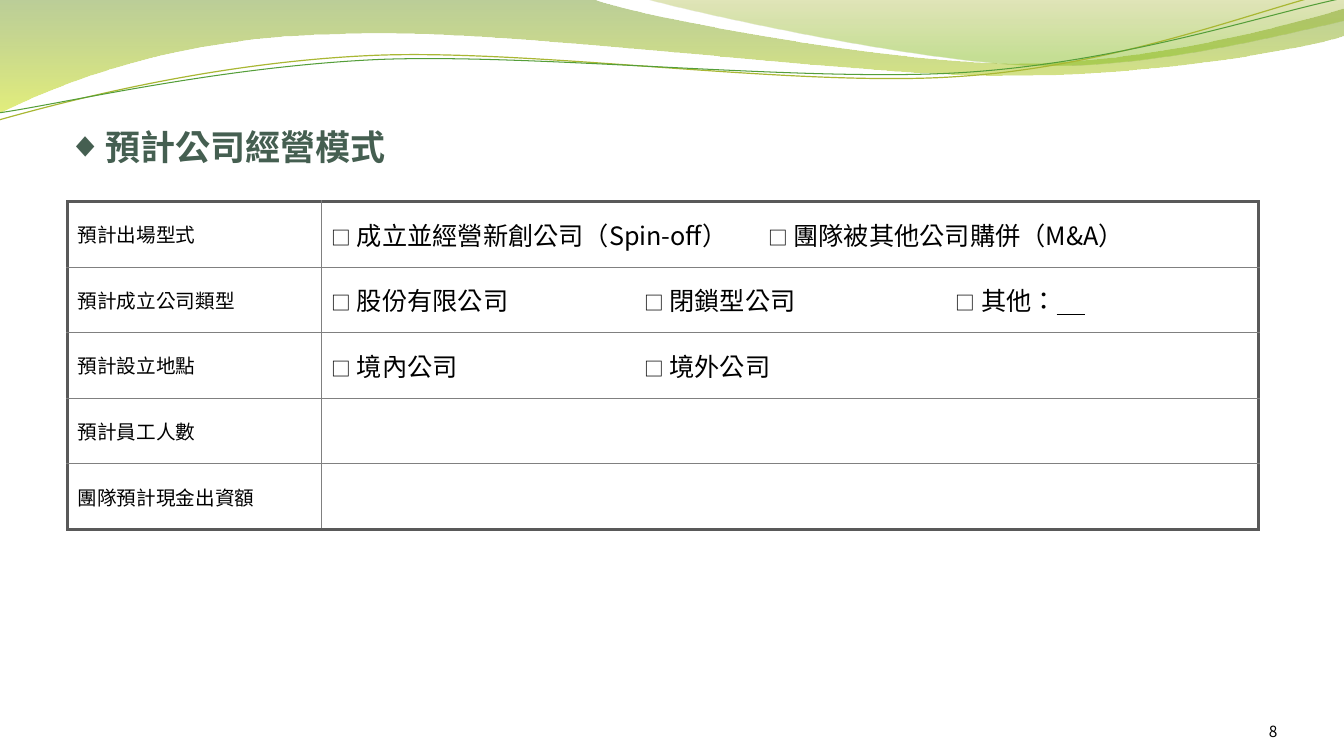
from dataclasses import dataclass

from lxml import etree
from pptx import Presentation
from pptx.dml.color import RGBColor
from pptx.enum.text import MSO_ANCHOR, PP_ALIGN
from pptx.oxml.ns import qn
from pptx.util import Inches, Pt

MIDDLE, BOTTOM = MSO_ANCHOR.MIDDLE, MSO_ANCHOR.BOTTOM
LEFT, RIGHT = PP_ALIGN.LEFT, PP_ALIGN.RIGHT
UNITS_PER_INCH = 1000
BLANK_WIDTH = 5


@dataclass(frozen=True)
class Theme:
    title_font: str = "Noto Sans CJK SC"
    body_font: str = "Noto Sans CJK TC"
    box_font: str = "Arial"
    title_size: float = 25
    label_size: float = 14
    option_size: float = 18
    number_size: float = 11
    title_color: str = "455F51"
    text_color: str = "000000"
    outer_border: tuple = ("595959", 2.25)
    inner_border: tuple = ("808080", 1)


def add_node(parent, tag, **attributes):
    return etree.SubElement(parent, qn(tag), {k: str(v) for k, v in attributes.items()})


def add_span(para, text, font, size, color, bold=False, underline=False, asian_font=None):
    span = para.add_run()
    span.text = text
    span.font.size = Pt(size)
    span.font.bold = bold
    span.font.underline = underline
    span.font.color.rgb = RGBColor.from_string(color)
    span.font.name = font
    properties = span._r.get_or_add_rPr()
    properties.set("lang", "zh-TW")
    add_node(properties, "a:ea", typeface=asian_font or font)


def bend(shape, segments):
    """Join the straight steps of each six-number segment into one cubic curve."""
    steps = iter(shape._element.spPr.findall(".//" + qn("a:lnTo")))
    for segment in segments:
        first = next(steps)
        if len(segment) == 6:
            first.tag_node = curve = etree.Element(qn("a:cubicBezTo"))
            first.addprevious(curve)
            for step in (first, next(steps), next(steps)):
                curve.append(step[0])
                step.getparent().remove(step)


def set_borders(cell, **sides):
    """Draw the sides L, R, T and B, each a (color, width) pair or None."""
    properties = cell._tc.get_or_add_tcPr()
    for index, side in enumerate("LRTB"):
        border = sides[side]
        line = etree.Element(qn(f"a:ln{side}"))
        if border:
            color, width = border
            line.set("w", str(Pt(width)))
            add_node(add_node(line, "a:solidFill"), "a:srgbClr", val=color)
        else:
            add_node(line, "a:noFill")
        properties.insert(index, line)


class Page:
    """Holds the theme and the slide being filled."""

    def __init__(self, slide, theme):
        self.slide = slide
        self.theme = theme

    def outline(self, start, segments, closed):
        """Add a freeform of segments with 2 (line) or 6 (cubic curve) numbers."""
        numbers = list(start) + [number for segment in segments for number in segment]
        scaled = [number * UNITS_PER_INCH for number in numbers]
        points = list(zip(scaled[::2], scaled[1::2]))
        builder = self.slide.shapes.build_freeform(
            *points[0], scale=Inches(1) / UNITS_PER_INCH)
        builder.add_line_segments(points[1:], close=closed)
        shape = builder.convert_to_shape()
        shape.shadow.inherit = False
        bend(shape, segments)
        return shape

    def wave(self, start, segments, stops):
        """Add a closed area, shaded downwards through (position, color, opacity) stops."""
        shape = self.outline(start, segments, closed=True)
        shape.line.fill.background()
        shape.fill.gradient()
        shape.fill.gradient_angle = 270
        for stop, (position, color, _) in zip(shape.fill.gradient_stops, stops):
            stop.position = position
            stop.color.rgb = RGBColor.from_string(color)
        colors = shape._element.spPr.findall(".//" + qn("a:gs") + "/" + qn("a:srgbClr"))
        for node, (_, _, opacity) in zip(colors, stops):
            add_node(node, "a:alpha", val=opacity * 1000)

    def strand(self, start, segments, color, width):
        shape = self.outline(start, segments, closed=False)
        shape.fill.background()
        shape.line.color.rgb = RGBColor.from_string(color)
        shape.line.width = Pt(width)

    def text(self, text, left, top, width, height, align=LEFT, bullet=None, inset=0, **style):
        box = self.slide.shapes.add_textbox(
            Inches(left), Inches(top), Inches(width), Inches(height))
        frame = box.text_frame
        frame.word_wrap = True
        frame.vertical_anchor = BOTTOM
        frame.margin_left = frame.margin_right = frame.margin_bottom = 0
        frame.margin_top = Inches(inset)
        para = frame.paragraphs[0]
        para.alignment = align
        if bullet:
            properties = para._p.get_or_add_pPr()
            properties.set("marL", str(Inches(0.38)))
            properties.set("indent", str(-Inches(0.38)))
            add_node(properties, "a:buFont", typeface=self.theme.box_font)
            add_node(properties, "a:buChar", char=bullet)
        add_span(para, text, **style)

    def option(self, para, text):
        """Write a tick box and its wording; a final colon gets a line to fill in."""
        theme = self.theme
        style = {"font": theme.body_font, "size": theme.option_size, "color": theme.text_color}
        add_span(para, "□", theme.box_font, theme.label_size, theme.text_color,
                 asian_font=theme.body_font)
        add_span(para, " " + text, **style)
        if text.endswith("："):
            add_span(para, " " * BLANK_WIDTH, underline=True, **style)

    def form(self, left, top, widths, row_height, rows):
        """Add a table; each row is a label and (text, columns spanned) options."""
        theme, last_row, last_column = self.theme, len(rows) - 1, len(widths) - 1
        table = self.slide.shapes.add_table(
            len(rows), len(widths), Inches(left), Inches(top),
            Inches(sum(widths)), Inches(row_height * len(rows))).table
        table.first_row = table.horz_banding = False
        for column, width in zip(table.columns, widths):
            column.width = Inches(width)
        for r, (label, options) in enumerate(rows):
            table.rows[r].height = Inches(row_height)
            first = 0
            for text, count in [(label, 1)] + options:
                last = first + count - 1
                cell = table.cell(r, first)
                if count > 1:
                    cell.merge(table.cell(r, last))
                for c in range(first, last + 1):
                    part = table.cell(r, c)
                    part.fill.background()
                    set_borders(
                        part,
                        L={0: theme.outer_border, 1: theme.inner_border}.get(first),
                        R={0: theme.inner_border, last_column: theme.outer_border}.get(last),
                        T=theme.inner_border if r else theme.outer_border,
                        B=theme.inner_border if r < last_row else theme.outer_border)
                cell.vertical_anchor = MIDDLE
                para = cell.text_frame.paragraphs[0]
                if first == 0:
                    add_span(para, text, theme.body_font, theme.label_size, theme.text_color)
                elif text:
                    self.option(para, text)
                first = last + 1


def main():
    deck = Presentation()
    deck.slide_width, deck.slide_height = Inches(13.33), Inches(7.5)
    theme = Theme()
    page = Page(deck.slides.add_slide(deck.slide_layouts[6]), theme)

    page.wave((0, 0), [
        (5.87, -0.01), (6.34, 0.17, 8.84, 0.63, 10.11, 0.63),
        (11.37, 0.63, 12.77, 0.26, 13.33, 0.09), (13.34, 0.36),
        (13.11, 0.44, 11.59, 0.76, 9.94, 0.75), (8.29, 0.75, 5.09, 0.28, 3.43, 0.34),
        (1.72, 0.36, 0.61, 0.83, -0.02, 1.13)],
        [(0, "69921C", 45), (1, "CCE10F", 55)])
    page.wave((6.38, -0.01), [
        (6.79, 0.11, 9.09, 0.62, 10.25, 0.65), (11.4, 0.69, 12.82, 0.32, 13.33, 0.21),
        (13.33, 0)],
        [(0, "9BAA1A", 30), (0.8, "81BA16", 45)])
    page.strand((-0.01, 1.19), [
        (0.63, 1.01, 2.1, 0.62, 3.69, 0.55), (5.27, 0.48, 7.89, 0.87, 9.49, 0.76),
        (11.1, 0.66, 12.51, 0.08, 13.3, -0.1)], "A9B733", 0.85)
    page.strand((-0.01, 1.12), [
        (0.62, 1.03, 2.18, 0.66, 3.77, 0.59), (5.37, 0.53, 7.96, 0.82, 9.55, 0.72),
        (11.14, 0.62, 12.55, 0.14, 13.33, -0.02)], "549E39", 0.75)

    page.text("預計公司經營模式", 0.67, 0.41, 12, 1.25, bullet="◆", inset=0.05,
              font=theme.title_font, size=theme.title_size, color=theme.title_color, bold=True)
    page.form(0.67, 2, [2.52, 3.1, 1.23, 1.86, 3.1], 0.65, [
        ("預計出場型式", [("成立並經營新創公司（Spin-off）", 2), ("團隊被其他公司購併（M&A）", 2)]),
        ("預計成立公司類型", [("股份有限公司", 1), ("閉鎖型公司", 2), ("其他：", 1)]),
        ("預計設立地點", [("境內公司", 1), ("境外公司", 3)]),
        ("預計員工人數", [("", 4)]),
        ("團隊預計現金出資額", [("", 4)]),
    ])
    page.text("8", 11.56, 6.95, 1.11, 0.4, align=RIGHT, font=theme.body_font,
              size=theme.number_size, color=theme.text_color)
    deck.save("out.pptx")


if __name__ == "__main__":
    main()
